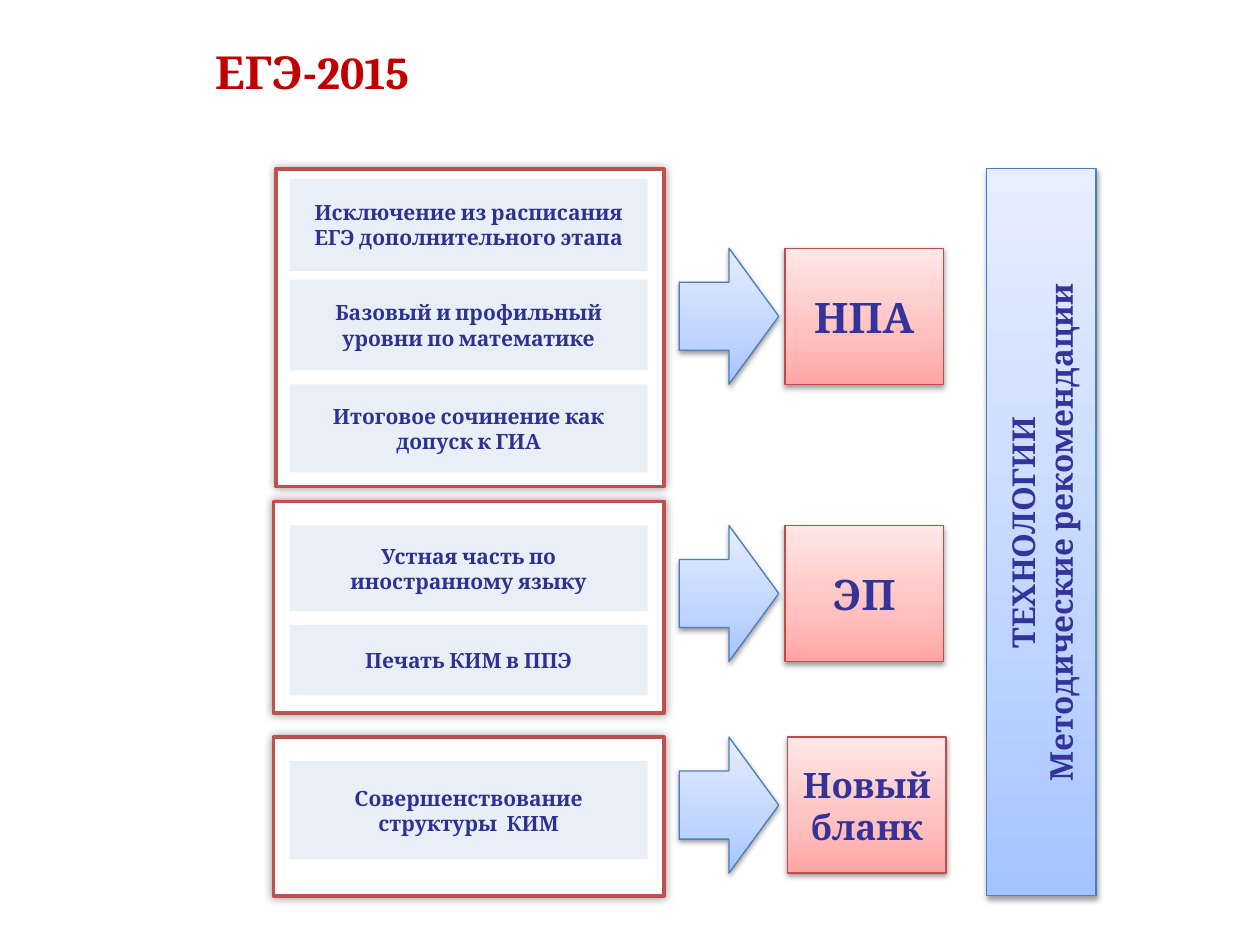
from dataclasses import dataclass

from lxml import etree
from pptx import Presentation
from pptx.dml.color import RGBColor
from pptx.enum.shapes import MSO_SHAPE
from pptx.enum.text import MSO_ANCHOR, PP_ALIGN
from pptx.oxml.ns import qn
from pptx.util import Inches, Pt

RECT, ARROW = MSO_SHAPE.RECTANGLE, MSO_SHAPE.RIGHT_ARROW
MIDDLE, CENTER, LEFT = MSO_ANCHOR.MIDDLE, PP_ALIGN.CENTER, PP_ALIGN.LEFT


@dataclass(frozen=True)
class Shade:
    alpha: int
    blur: float
    dist: float


@dataclass(frozen=True)
class Ramp:
    stops: tuple
    line: str


@dataclass(frozen=True)
class Theme:
    font: str = "Cambria"
    title: str = "C00000"
    body: str = "2E3192"
    mark: str = "333399"
    tint: str = "B9CDE5"
    frame: str = "C0504D"
    white: str = "FFFFFF"
    blue: Ramp = Ramp(((0, "A4C4FF"), (35, "BFD4FF"), (100, "E6EEFF")), "4B7EBC")
    red: Ramp = Ramp(((0, "FFA6A5"), (35, "FFC0BF"), (100, "FFE7E7")), "BF4C48")
    glow: Shade = Shade(40, 5, 0)
    drop: Shade = Shade(38, 3.1, 1.6)
    head: int = 26
    item: int = 12
    big: int = 24
    mid: int = 20
    side: int = 18


@dataclass(frozen=True)
class Item:
    top: float
    high: float
    text: str


@dataclass(frozen=True)
class Group:
    left: float
    top: float
    high: float
    items: tuple
    step: float
    goal: str
    size: int
    goal_x: float = 6.23


THEME = Theme()
EDGE = 5.27
GROUPS = (
    Group(2.19, 1.34, 2.52, (
        Item(1.42, 0.73, "Исключение из расписания ЕГЭ дополнительного этапа"),
        Item(2.22, 0.72, "Базовый и профильный уровни по математике"),
        Item(3.05, 0.7, "Итоговое сочинение как допуск к ГИА"),
    ), 1.97, "НПА", THEME.big),
    Group(2.17, 3.98, 1.68, (
        Item(4.17, 0.68, "Устная часть по иностранному языку"),
        Item(4.96, 0.56, "Печать КИМ в ППЭ"),
    ), 4.17, "ЭП", THEME.big),
    Group(2.17, 5.85, 1.26, (
        Item(6.04, 0.78, "Совершенствование структуры  КИМ"),
    ), 5.85, "Новый бланк", THEME.mid, 6.25),
)


def add_shade(host, shade: Shade) -> None:
    node = etree.SubElement(host, qn("a:outerShdw"), blurRad=str(Pt(shade.blur)),
                            dist=str(Pt(shade.dist)), dir="5400000",
                            algn="ctr", rotWithShape="0")
    color = etree.SubElement(node, qn("a:srgbClr"), val="000000")
    etree.SubElement(color, qn("a:alpha"), val=str(shade.alpha * 1000))


def add_box(slide, kind, x: float, y: float, w: float, h: float):
    shape = slide.shapes.add_shape(kind, Inches(x), Inches(y), Inches(w), Inches(h))
    shape.shadow.inherit = False
    return shape


def set_fill(shape, color: str) -> None:
    shape.fill.solid()
    shape.fill.fore_color.rgb = RGBColor.from_string(color)


def set_line(shape, color: str, width: float) -> None:
    shape.line.color.rgb = RGBColor.from_string(color)
    shape.line.width = Pt(width)


def set_shade(shape, shade: Shade) -> None:
    add_shade(shape._element.spPr.find(qn("a:effectLst")), shade)


def set_text(shape, lines: tuple, size: int, color: str, align=CENTER) -> None:
    frame = shape.text_frame
    frame.word_wrap = True
    frame.text = "\n".join(lines)
    look = {"name": THEME.font, "size": Pt(size), "bold": True}
    for para in frame.paragraphs:
        para.alignment = align
        font = para.runs[0].font
        for key, value in look.items():
            setattr(font, key, value)
        font.color.rgb = RGBColor.from_string(color)


def add_ramp(slide, kind, x: float, y: float, w: float, h: float, ramp: Ramp):
    shape = add_box(slide, kind, x, y, w, h)
    shape.fill.gradient()
    shape.fill.gradient_angle = 90
    stops = shape._element.spPr.find(".//" + qn("a:gsLst"))
    for old in list(stops):
        stops.remove(old)
    for place, color in ramp.stops:
        stop = etree.SubElement(stops, qn("a:gs"), pos=str(place * 1000))
        etree.SubElement(stop, qn("a:srgbClr"), val=color)
    set_line(shape, ramp.line, 0.75)
    set_shade(shape, THEME.drop)
    shape.text_frame.vertical_anchor = MIDDLE
    return shape


def add_item(slide, item: Item) -> None:
    shape = add_box(slide, RECT, 2.3, item.top, 2.84, item.high)
    set_fill(shape, THEME.tint)
    color = shape._element.spPr.find(".//" + qn("a:srgbClr"))
    etree.SubElement(color, qn("a:alpha"), val="31000")
    shape.line.fill.background()
    shape.text_frame.vertical_anchor = MIDDLE
    set_text(shape, (item.text,), THEME.item, THEME.body)


def add_group(slide, group: Group) -> None:
    frame = add_box(slide, RECT, group.left, group.top, EDGE - group.left, group.high)
    set_fill(frame, THEME.white)
    set_line(frame, THEME.frame, 2)
    set_shade(frame, THEME.glow)
    for item in group.items:
        add_item(slide, item)
    add_ramp(slide, ARROW, 5.39, group.step, 0.79, 1.08, THEME.blue)
    goal = add_ramp(slide, RECT, group.goal_x, group.step, 1.26, 1.08, THEME.red)
    set_text(goal, (group.goal,), group.size, THEME.mark)


def add_title(slide) -> None:
    box = slide.shapes.add_textbox(Inches(1.61), Inches(0.3), Inches(7.88), Inches(0.54))
    set_text(box, ("ЕГЭ-2015",), THEME.head, THEME.title, LEFT)
    fill = box._element.find(".//" + qn("a:rPr")).find(qn("a:solidFill"))
    effect = etree.Element(qn("a:effectLst"))
    fill.addnext(effect)
    add_shade(effect, Shade(43, 3, 3))


def add_side(slide) -> None:
    bar = add_ramp(slide, RECT, 7.83, 1.34, 0.87, 5.77, THEME.blue)
    bar.text_frame._txBody.bodyPr.set("vert", "vert270")
    set_text(bar, ("ТЕХНОЛОГИИ", "Методические рекомендации"), THEME.side, THEME.mark)


def main() -> None:
    deck = Presentation()
    deck.slide_width, deck.slide_height = Inches(10), Inches(7.5)
    slide = deck.slides.add_slide(deck.slide_layouts[6])
    add_title(slide)
    for group in reversed(GROUPS):
        add_group(slide, group)
    add_side(slide)
    deck.save("out.pptx")


if __name__ == "__main__":
    main()
